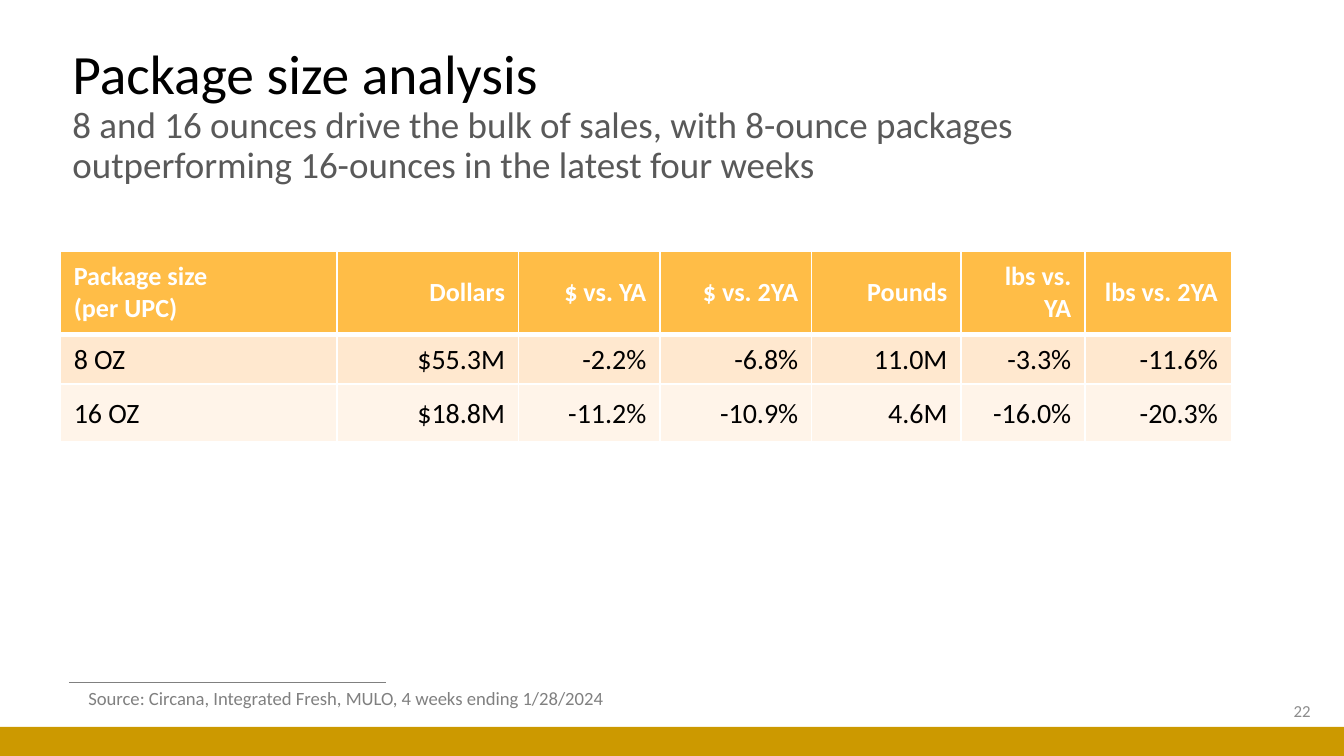
from pptx import Presentation
from pptx.dml.color import RGBColor
from pptx.enum.shapes import MSO_CONNECTOR, MSO_SHAPE
from pptx.enum.text import MSO_ANCHOR as Anchor, MSO_AUTO_SIZE as AutoSize, PP_ALIGN as Align
from pptx.oxml import parse_xml
from pptx.oxml.ns import nsdecls
from pptx.util import Cm, Pt

BLACK = RGBColor(0x00, 0x00, 0x00)
WHITE = RGBColor(0xFF, 0xFF, 0xFF)
DARK_GRAY = RGBColor(0x59, 0x59, 0x59)
GRAY = RGBColor(0x80, 0x80, 0x80)
LIGHT_GRAY = RGBColor(0x8C, 0x8C, 0x8C)
GOLD = RGBColor(0xCC, 0x99, 0x00)
ORANGE = RGBColor(0xFF, 0xBD, 0x47)
PEACH = RGBColor(0xFF, 0xE8, 0xCF)
CREAM = RGBColor(0xFF, 0xF4, 0xE9)


def write(para, text, size, color, bold=False, align=Align.LEFT):
    """Add text to a paragraph, with a line break at each newline."""
    para.alignment = align
    for index, line in enumerate(text.split("\n")):
        if index:
            para.add_line_break()
        if line:
            span = para.add_run()
            span.text = line
            span.font.name = "Calibri"
            span.font.size = Pt(size)
            span.font.bold = bold
            span.font.color.rgb = color


def set_border(cell, side, width):
    """Draw one white cell border; call before the cell is filled."""
    cell._tc.get_or_add_tcPr().append(parse_xml(
        f'<a:ln{side} {nsdecls("a")} w="{Pt(width)}"><a:solidFill>'
        f'<a:srgbClr val="{WHITE}"/></a:solidFill></a:ln{side}>'))


deck = Presentation()
deck.slide_width, deck.slide_height = Cm(25.4), Cm(14.29)
slide = deck.slides.add_slide(deck.slide_layouts[6])
shapes = slide.shapes

# Footer rule and bar
rule = shapes.add_connector(MSO_CONNECTOR.STRAIGHT, Cm(1.3), Cm(12.9), Cm(7.29), Cm(12.9))
rule.line.color.rgb = GRAY
rule.line.width = Pt(0.5)
rule._element.spPr.append(parse_xml(f'<a:effectLst {nsdecls("a")}/>'))

bar = shapes.add_shape(MSO_SHAPE.RECTANGLE, 0, Cm(13.74), deck.slide_width, Cm(0.55))
bar.shadow.inherit = False
bar.fill.solid()
bar.fill.fore_color.rgb = GOLD
bar.line.fill.background()

# Title and subtitle
title = shapes.add_textbox(Cm(1.12), Cm(0.86), Cm(21.67), Cm(2.7)).text_frame
title.word_wrap = True
title.vertical_anchor = Anchor.MIDDLE
para = title.paragraphs[0]
para.line_spacing = 0.9
write(para, "Package size analysis\n", 29.7, BLACK)
write(para, "8 and 16 ounces drive the bulk of sales, with 8-ounce packages "
            "outperforming 16-ounces in the latest four weeks", 19.8, DARK_GRAY)

# Page number
number = shapes.add_textbox(Cm(19.3), Cm(13.06), Cm(5.72), Cm(0.76)).text_frame
number.word_wrap = True
number.vertical_anchor = Anchor.MIDDLE
write(number.paragraphs[0], "22", 9, LIGHT_GRAY, align=Align.RIGHT)

# Source line
source = shapes.add_textbox(Cm(1.42), Cm(12.85), Cm(10.62), Cm(0.69)).text_frame
source.word_wrap = False
source.auto_size = AutoSize.SHAPE_TO_FIT_TEXT
write(source.paragraphs[0],
      "Source: Circana, Integrated Fresh, MULO, 4 weeks ending 1/28/2024", 10, GRAY)

# Package size table
rows = [
    ["Package size\n(per UPC)", "Dollars", "$ vs. YA", "$ vs. 2YA", "Pounds",
     "lbs vs. YA", "lbs vs. 2YA"],
    ["8 OZ", "$55.3M", "-2.2%", "-6.8%", "11.0M", "-3.3%", "-11.6%"],
    ["16 OZ", "$18.8M", "-11.2%", "-10.9%", "4.6M", "-16.0%", "-20.3%"],
]
widths = [5.23, 3.43, 2.67, 2.87, 2.82, 2.34, 2.77]
heights = [1.57, 0.94, 1.09]
fills = [ORANGE, PEACH, CREAM]

table = shapes.add_table(len(rows), len(widths), Cm(1.14), Cm(4.75),
                         Cm(sum(widths)), Cm(sum(heights))).table
for column, width in zip(table.columns, widths):
    column.width = Cm(width)

for row_index, values in enumerate(rows):
    table.rows[row_index].height = Cm(heights[row_index])
    header = row_index == 0
    for column_index, value in enumerate(values):
        cell = table.cell(row_index, column_index)
        for side in "LRTB":
            thick = (row_index, side) in [(0, "B"), (1, "T")]
            set_border(cell, side, 3 if thick else 1)
        cell.fill.solid()
        cell.fill.fore_color.rgb = fills[row_index]
        cell.vertical_anchor = Anchor.MIDDLE
        if not header:
            cell.margin_top, cell.margin_bottom = Cm(0.03), 0
        write(cell.text_frame.paragraphs[0], value, 14 if header else 15,
              WHITE if header else BLACK, bold=header,
              align=Align.RIGHT if column_index else Align.LEFT)

deck.save("out.pptx")
